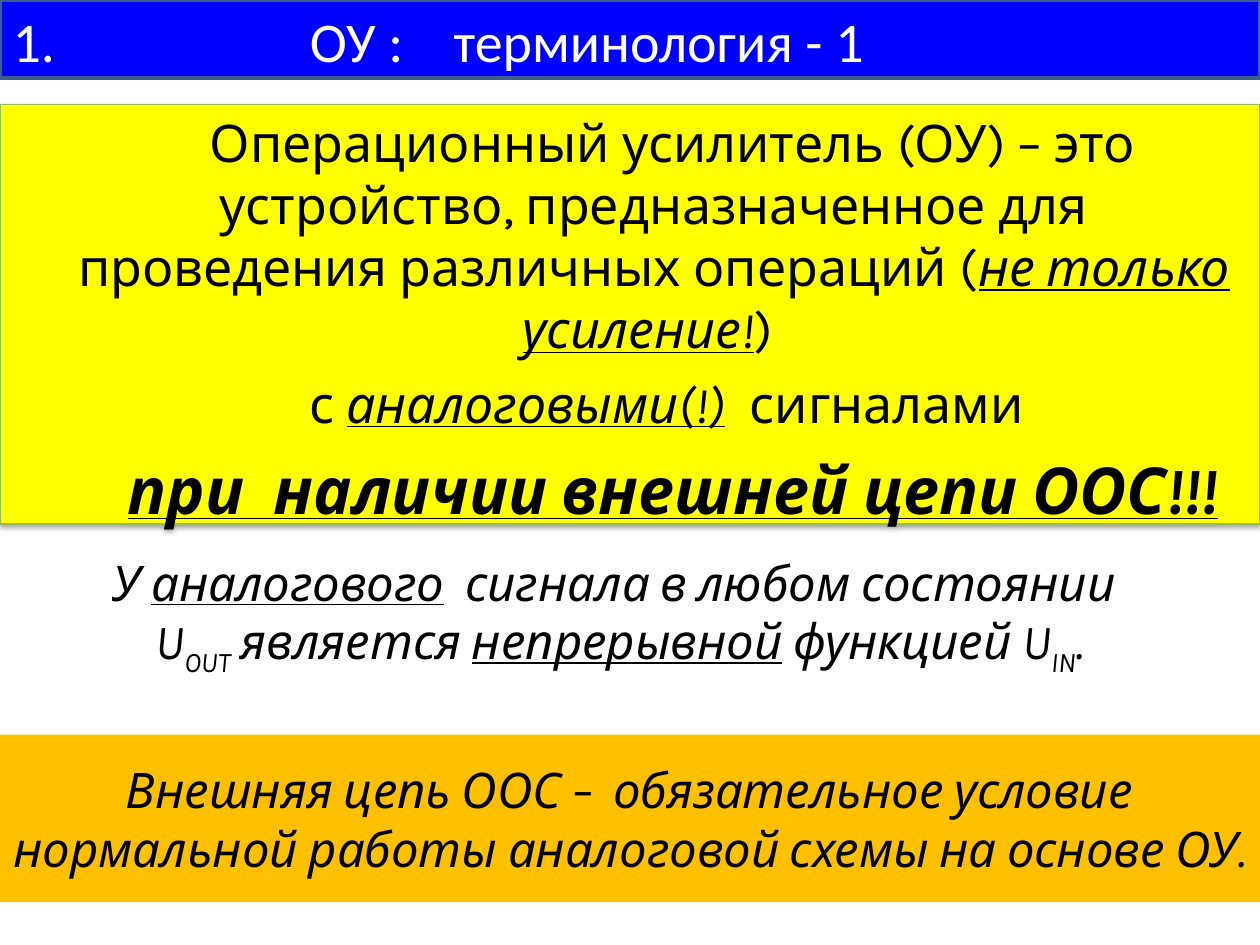
"""Builds a slide that defines the operational amplifier and its feedback condition."""
from lxml import etree
from pptx import Presentation
from pptx.dml.color import RGBColor
from pptx.enum.shapes import MSO_SHAPE
from pptx.enum.text import MSO_ANCHOR, MSO_AUTO_SIZE, PP_ALIGN
from pptx.oxml.ns import qn
from pptx.util import Inches, Pt

RECT = MSO_SHAPE.RECTANGLE
TOP, MIDDLE = MSO_ANCHOR.TOP, MSO_ANCHOR.MIDDLE
LEFT, CENTER = PP_ALIGN.LEFT, PP_ALIGN.CENTER
COLORS = {"blue": "0000FF", "navy": "3A5F8C", "yellow": "FFFF00", "green": "98B955",
          "orange": "FFC000", "black": "000000", "white": "FFFFFF"}


def add_run(p, text, size=28, font="Karla", color="black", bold=False,
            italic=False, underline=False, sub=False):
    r = p.add_run()
    r.text = text
    r.font.size, r.font.name = Pt(size), font
    r.font.color.rgb = RGBColor.from_string(COLORS[color])
    r.font.bold, r.font.italic, r.font.underline = bold, italic, underline
    if sub:
        r._r.get_or_add_rPr().set("baseline", "-25000")


def style_box(sp, fill=None, line=None, width=0.75, anchor=TOP):
    if fill:
        sp.fill.solid()
        sp.fill.fore_color.rgb = RGBColor.from_string(COLORS[fill])
    if line:
        sp.line.color.rgb = RGBColor.from_string(COLORS[line])
        sp.line.width = Pt(width)
    else:
        sp.line.fill.background()
    tf = sp.text_frame
    tf.word_wrap, tf.auto_size, tf.vertical_anchor = True, MSO_AUTO_SIZE.NONE, anchor
    return tf


prs = Presentation()
prs.slide_width, prs.slide_height = Inches(10), Inches(7.5)
s = prs.slides.add_slide(prs.slide_layouts[5])

title = s.shapes.title
title.left, title.top, title.width, title.height = Inches(0), Inches(0), Inches(10), Inches(0.62)
p = style_box(title, "blue", "navy", 2).paragraphs[0]
p.alignment = LEFT
tabs = etree.SubElement(p._p.get_or_add_pPr(), qn("a:tabLst"))
for pos in (2.36, 3.5):
    etree.SubElement(tabs, qn("a:tab"), pos=str(Inches(pos)), algn="l")
add_run(p, "1.\tОУ :\tтерминология - 1", size=32, font="Calibri", color="white")

definition = s.shapes.add_shape(RECT, Inches(0), Inches(0.83), Inches(10), Inches(3.33))
definition.shadow.inherit = False
effects = definition._element.spPr.find(qn("a:effectLst"))
shadow = etree.SubElement(effects, qn("a:outerShdw"), blurRad=str(Pt(3.1)),
                          dist=str(Pt(1.6)), dir="5400000", rotWithShape="0")
shade = etree.SubElement(shadow, qn("a:srgbClr"), val=COLORS["black"])
etree.SubElement(shade, qn("a:alpha"), val="38000")
tf = style_box(definition, "yellow", "green")
marked = {"italic": True, "underline": True}
definition_lines = [
    (29.6, 7, [("Операционный усилитель (ОУ) – это устройство, предназначенное для "
                "проведения различных операций (", {}),
               ("не только усиление!", marked), (") ", {})]),
    (29.6, 7, [("с ", {}), ("аналоговыми(!)", marked), ("  сигналами ", {})]),
    (37, 9, [("при  наличии внешней цепи ООС!!!", {"bold": True, **marked})]),
]
for i, (size, before, runs) in enumerate(definition_lines):
    p = tf.add_paragraph() if i else tf.paragraphs[0]
    p.alignment, p.space_before = CENTER, Pt(before)
    pPr = p._p.get_or_add_pPr()
    pPr.set("marL", str(Inches(0.38)))
    pPr.set("indent", str(Inches(0.3)))
    for text, fmt in runs:
        add_run(p, text, size=size, **fmt)

signal = s.shapes.add_textbox(Inches(0), Inches(4.42), Inches(9.75), Inches(0.92))
tf = style_box(signal, anchor=MIDDLE)
signal_lines = [
    [("У ", {}), ("аналогового", {"underline": True}), ("  сигнала в любом состоянии", {})],
    [(" U", {}), ("OUT", {"sub": True}), (" является ", {}),
     ("непрерывной", {"underline": True}), (" функцией U", {}), ("IN", {"sub": True}), (".", {})],
]
for i, runs in enumerate(signal_lines):
    p = tf.add_paragraph() if i else tf.paragraphs[0]
    p.alignment = CENTER
    for text, fmt in runs:
        add_run(p, text, italic=True, **fmt)

condition = s.shapes.add_shape(RECT, Inches(-0.01), Inches(5.83), Inches(10.01), Inches(1.33))
condition.shadow.inherit = False
p = style_box(condition, "orange", anchor=MIDDLE).paragraphs[0]
p.alignment = CENTER
add_run(p, "Внешняя цепь ООС –  обязательное условие нормальной работы "
           "аналоговой схемы на основе ОУ. ", italic=True)

prs.save("out.pptx")
